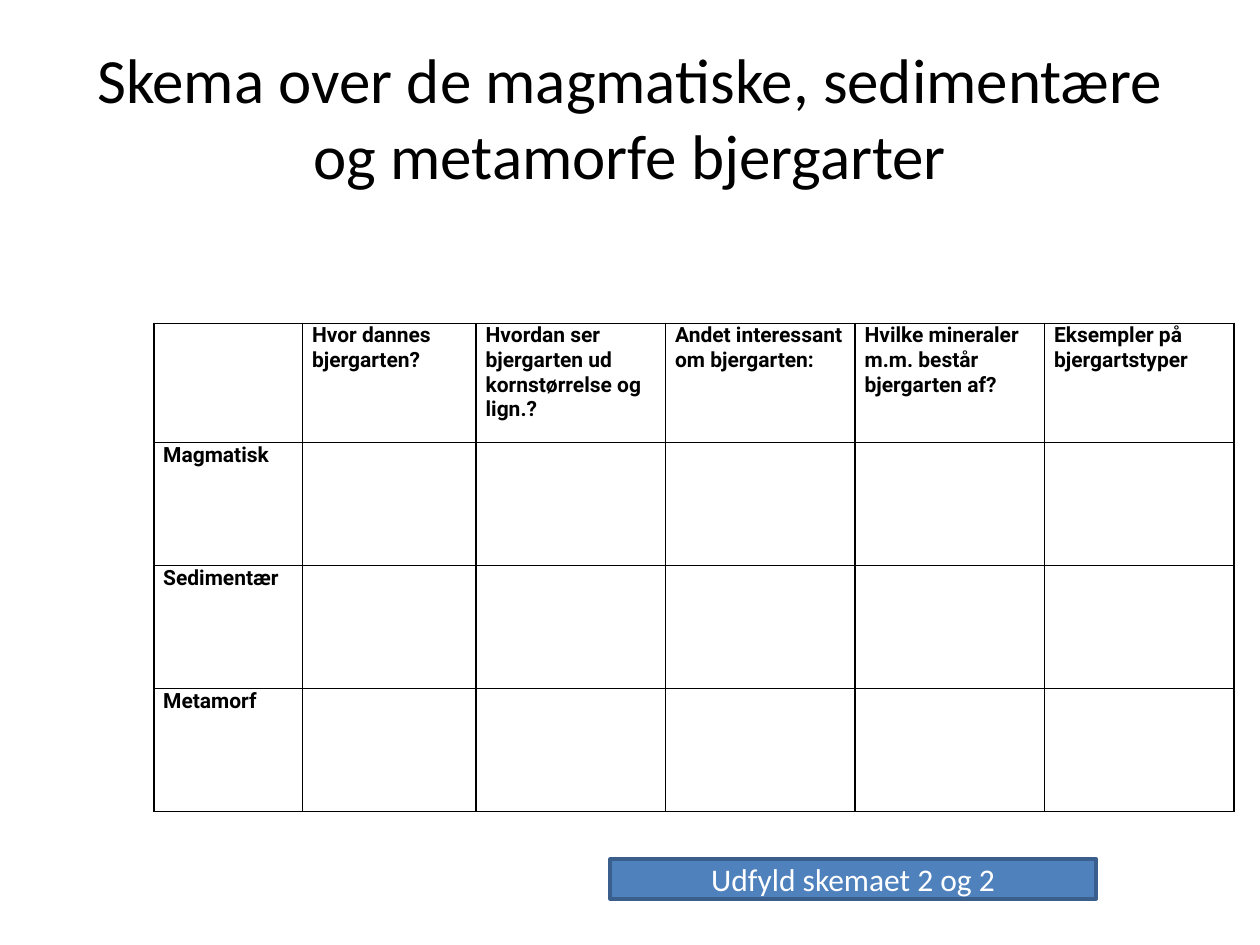
from lxml import etree
from pptx import Presentation
from pptx.dml.color import RGBColor
from pptx.enum.shapes import MSO_SHAPE
from pptx.enum.text import MSO_ANCHOR, PP_ALIGN
from pptx.oxml.ns import qn
from pptx.util import Cm, Pt

RECT = MSO_SHAPE.RECTANGLE
MIDDLE = MSO_ANCHOR.MIDDLE
CENTER = PP_ALIGN.CENTER
BLACK = RGBColor(0, 0, 0)
WHITE = RGBColor(0xFF, 0xFF, 0xFF)
BLUE = RGBColor(0x4F, 0x81, 0xBD)
NAVY = RGBColor(0x3A, 0x5F, 0x8C)

HEADS = [
    "",
    "Hvor dannes bjergarten?",
    "Hvordan ser bjergarten ud kornstørrelse og lign.?",
    "Andet interessant om bjergarten:",
    "Hvilke mineraler m.m. består bjergarten af?",
    "Eksempler på bjergartstyper",
]
ROCKS = ["Magmatisk", "Sedimentær", "Metamorf"]
COLS = [3, 3.5] + [3.82] * 4
ROWS = [2.4] + [2.48] * len(ROCKS)


def style(para, name, size, color, bold=False):
    font = para.font
    font.name, font.size, font.bold = name, Pt(size), bold
    font.color.rgb = color


def center(frame, text, size, color):
    frame.word_wrap = True
    frame.vertical_anchor = MIDDLE
    para = frame.paragraphs[0]
    para.text = text
    para.alignment = CENTER
    style(para, "Calibri", size, color)


def border(cell):
    props = cell._tc.get_or_add_tcPr()
    for index, side in enumerate(("lnL", "lnR", "lnT", "lnB")):
        line = etree.Element(qn(f"a:{side}"), w=str(Pt(1)))
        fill = etree.SubElement(line, qn("a:solidFill"))
        etree.SubElement(fill, qn("a:srgbClr"), val=str(BLACK))
        props.insert(index, line)


def add_title(slide, left, top, width, height):
    box = slide.shapes.add_textbox(Cm(left), Cm(top), Cm(width), Cm(height))
    text = "Skema over de magmatiske, sedimentære og metamorfe bjergarter"
    center(box.text_frame, text, 36, BLACK)


def add_grid(slide, left, top):
    """Place the form: headings on top, rock types at the left, the rest empty."""
    table = slide.shapes.add_table(
        len(ROWS), len(COLS), Cm(left), Cm(top), Cm(sum(COLS)), Cm(sum(ROWS))
    ).table
    for col, width in zip(table.columns, COLS):
        col.width = Cm(width)
    for row, height in zip(table.rows, ROWS):
        row.height = Cm(height)
    for cell in table.iter_cells():
        cell.margin_left = cell.margin_right = Cm(0.19)
        cell.margin_top = cell.margin_bottom = 0
        cell.fill.background()
        border(cell)
    for col, head in enumerate(HEADS):
        table.cell(0, col).text = head
    for row, rock in enumerate(ROCKS, 1):
        table.cell(row, 0).text = rock
    for cell in table.iter_cells():
        style(cell.text_frame.paragraphs[0], "Roboto", 12, BLACK, True)


def add_task(slide, left, top, width, height):
    bar = slide.shapes.add_shape(RECT, Cm(left), Cm(top), Cm(width), Cm(height))
    bar.shadow.inherit = False
    bar.fill.solid()
    bar.fill.fore_color.rgb = BLUE
    bar.line.color.rgb = NAVY
    bar.line.width = Pt(2)
    center(bar.text_frame, "Udfyld skemaet 2 og 2", 18, WHITE)


def main():
    deck = Presentation()
    deck.slide_width, deck.slide_height = Cm(25.4), Cm(19.05)
    slide = deck.slides.add_slide(deck.slide_layouts[6])
    add_title(slide, 1.27, 0.76, 22.86, 3.18)
    add_grid(slide, 3.1, 6.52)
    add_task(slide, 12.3, 17.32, 9.8, 0.8)
    deck.save("out.pptx")


if __name__ == "__main__":
    main()
